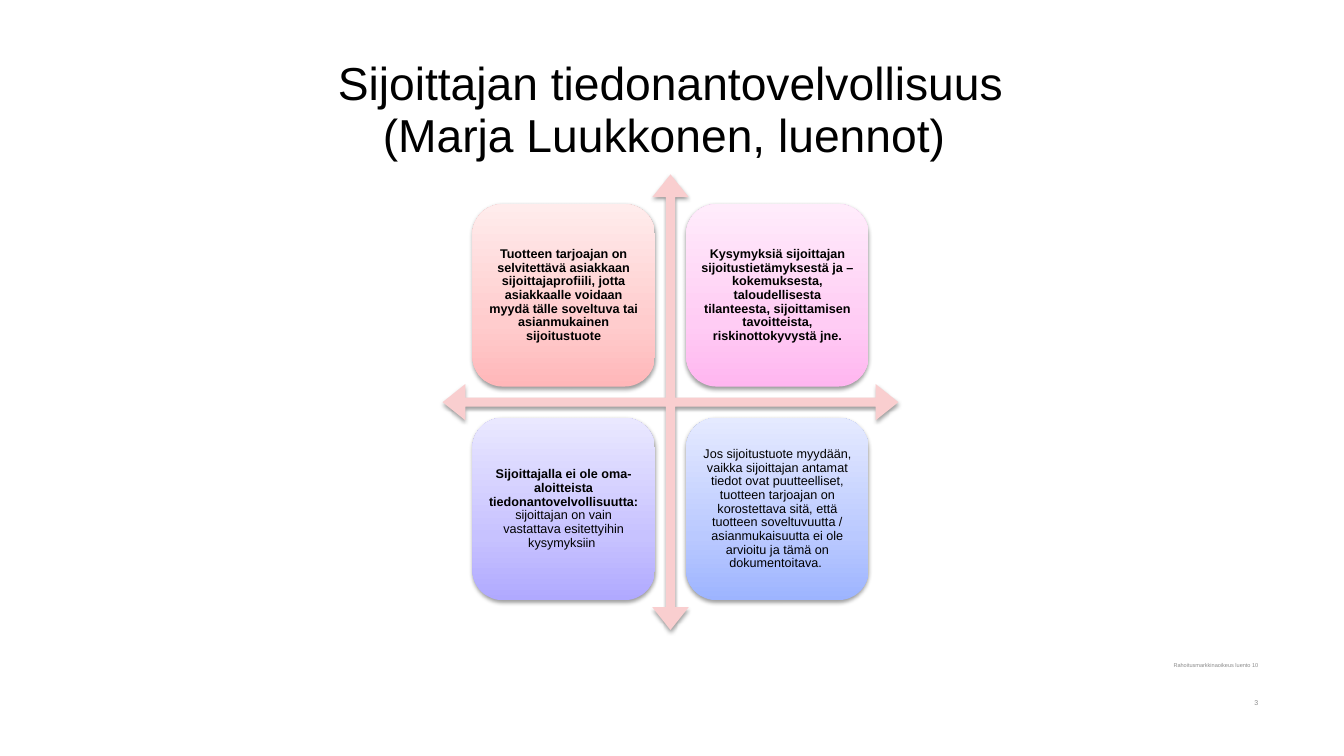
from copy import deepcopy

from lxml.etree import SubElement
from pptx import Presentation
from pptx.dml.color import RGBColor
from pptx.enum.shapes import MSO_SHAPE
from pptx.enum.text import MSO_ANCHOR, PP_ALIGN
from pptx.oxml.ns import qn
from pptx.util import Inches, Pt

BLACK = RGBColor(0x00, 0x00, 0x00)
GREY = RGBColor(0x8C, 0x8C, 0x8C)
ARROW_PINK = RGBColor(0xF9, 0xCE, 0xCF)
RED = [RGBColor(0xFF, 0xB7, 0xB9), RGBColor(0xFF, 0xCC, 0xCD), RGBColor(0xFF, 0xEC, 0xEC)]
PINK = [RGBColor(0xFF, 0xB6, 0xF0), RGBColor(0xFF, 0xCC, 0xF4), RGBColor(0xFF, 0xEC, 0xFB)]
VIOLET = [RGBColor(0xB0, 0xA9, 0xFF), RGBColor(0xC7, 0xC2, 0xFF), RGBColor(0xEA, 0xE8, 0xFF)]
BLUE = [RGBColor(0x9D, 0xB4, 0xFF), RGBColor(0xBA, 0xC9, 0xFF), RGBColor(0xE5, 0xEA, 0xFF)]


def write(sp, runs, size, color=BLACK, align=PP_ALIGN.CENTER, spacing=0.9,
          anchor=MSO_ANCHOR.MIDDLE, insets=(0.04, 0.04, 0.04, 0.04)):
    """Fill a shape with one paragraph of (text, bold) runs."""
    tf = sp.text_frame
    tf.word_wrap = True
    tf.vertical_anchor = anchor
    tf.margin_left, tf.margin_top, tf.margin_right, tf.margin_bottom = map(Inches, insets)
    p = tf.paragraphs[0]
    p.alignment = align
    p.line_spacing = spacing
    for i, (text, bold) in enumerate(runs):
        for j, line in enumerate(text.split("\n")):
            if j:
                p.add_line_break()
            r = p.add_run()
            r.text = line
            r.font.name = "Arial"
            r.font.size = Pt(size)
            r.font.bold = bold
            r.font.color.rgb = color


def soft_shadow(sp):
    """Remove the outline and cast a soft shadow straight down."""
    sp.line.fill.background()
    sp.shadow.inherit = False
    effects = sp._element.spPr.find(qn("a:effectLst"))
    shadow = SubElement(effects, qn("a:outerShdw"), blurRad=str(Pt(3.1)),
                        dist=str(Pt(1.6)), dir="5400000", rotWithShape="0")
    black = SubElement(shadow, qn("a:srgbClr"), val="000000")
    SubElement(black, qn("a:alpha"), val="38000")


prs = Presentation()
prs.slide_width, prs.slide_height = Inches(13.33), Inches(7.5)
s = prs.slides.add_slide(prs.slide_layouts[5])

# Title
title = s.shapes.title
title.left, title.top, title.width, title.height = map(Inches, (0.83, 0.53, 11.64, 1.18))
write(title, [("Sijoittajan tiedonantovelvollisuus\n(Marja Luukkonen, luennot) ", False)], 33,
      spacing=0.94, anchor=MSO_ANCHOR.TOP, insets=(0.1, 0.05, 0.1, 0.05))

# Footer and slide number
for text, size, top in [("Rahoitusmarkkinaoikeus luento 10", 4, 6.51), ("3", 5, 6.89)]:
    sp = s.shapes.add_textbox(Inches(7.2), Inches(top), Inches(5.28), Inches(0.18))
    write(sp, [(text, False)], size, color=GREY, align=PP_ALIGN.RIGHT,
          insets=(0.1, 0.05, 0, 0.05))

# Four-way arrow behind the matrix
center_x, center_y, arrow_size = 6.65, 3.99, 4.52
arrow = s.shapes.add_shape(MSO_SHAPE.QUAD_ARROW, Inches(center_x - arrow_size / 2),
                           Inches(center_y - arrow_size / 2),
                           Inches(arrow_size), Inches(arrow_size))
for i, value in enumerate((0.02, 0.04, 0.05)):
    arrow.adjustments[i] = value
arrow.fill.solid()
arrow.fill.fore_color.rgb = ARROW_PINK
soft_shadow(arrow)

# Matrix of two by two tiles, spread evenly around the arrow's centre
tiles = [
    (RED, [("Tuotteen tarjoajan on selvitettävä asiakkaan sijoittajaprofiili, jotta "
            "asiakkaalle voidaan myydä tälle soveltuva tai asianmukainen sijoitustuote", True)]),
    (PINK, [("Kysymyksiä sijoittajan sijoitustietämyksestä ja –kokemuksesta, taloudellisesta "
             "tilanteesta, sijoittamisen tavoitteista, riskinottokyvystä jne.", True)]),
    (VIOLET, [("Sijoittajalla ei ole oma-aloitteista tiedonantovelvollisuutta: ", True),
              ("sijoittajan on vain vastattava esitettyihin kysymyksiin ", False)]),
    (BLUE, [("Jos sijoitustuote myydään, vaikka sijoittajan antamat tiedot ovat puutteelliset, "
             "tuotteen tarjoajan on korostettava sitä, että tuotteen soveltuvuutta / "
             "asianmukaisuutta ei ole arvioitu ja tämä on dokumentoitava. ", False)]),
]
tile_size, gap = 1.81, 0.31
for i, (colors, runs) in enumerate(tiles):
    row, col = divmod(i, 2)
    left = center_x - gap / 2 - tile_size + col * (tile_size + gap)
    top = center_y - gap / 2 - tile_size + row * (tile_size + gap)
    tile = s.shapes.add_shape(MSO_SHAPE.ROUNDED_RECTANGLE, Inches(left), Inches(top),
                              Inches(tile_size), Inches(tile_size))
    # Three-stop gradient, darkest at the bottom
    tile.fill.gradient()
    tile.fill.gradient_angle = 90
    stop_list = tile._element.spPr.find(qn("a:gradFill")).find(qn("a:gsLst"))
    stop_list.insert(1, deepcopy(stop_list[0]))
    for stop, color, position in zip(tile.fill.gradient_stops, colors, (0, 0.35, 1)):
        stop.color.rgb = color
        stop.position = position
    soft_shadow(tile)
    write(tile, runs, 9)

prs.save("out.pptx")
